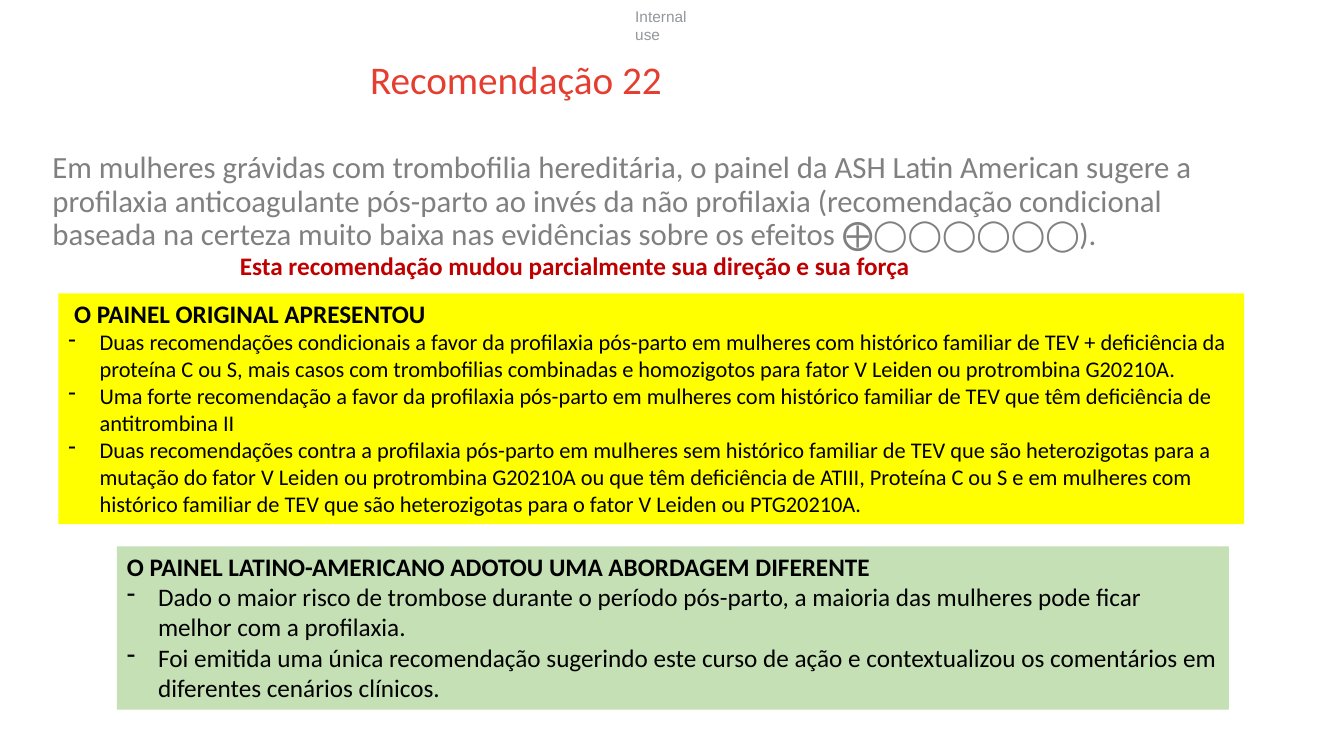
from lxml.etree import SubElement
from pptx import Presentation
from pptx.dml.color import RGBColor
from pptx.enum.shapes import MSO_SHAPE
from pptx.enum.text import MSO_ANCHOR, MSO_AUTO_SIZE, PP_ALIGN
from pptx.oxml.ns import qn
from pptx.util import Inches, Pt

COLORS = {"label": "93979B", "title": "E53E31", "body": "808080", "alert": "C00000",
          "text": "000000", "yellow": "FFFF00", "green": "C5E0B4"}
HANG = 0.31

TITLE = "Recomendação 22"
BODY = ("Em mulheres grávidas com trombofilia hereditária, o painel da ASH Latin American "
        "sugere a profilaxia anticoagulante pós-parto ao invés da não profilaxia "
        "(recomendação condicional baseada na certeza muito baixa nas evidências sobre os "
        "efeitos ⨁◯◯◯◯◯◯).")
LABEL = "Internal use"
ALERT = "Esta recomendação mudou parcialmente sua direção e sua força"

PANELS = [
    {"box": (0.58, 2.91, 11.76, 2.29), "fill": "yellow", "size": 16,
     "heading": " O PAINEL ORIGINAL APRESENTOU",
     "items": [
         "Duas recomendações condicionais a favor da profilaxia pós-parto em mulheres com "
         "histórico familiar de TEV + deficiência da proteína C ou S, mais casos com "
         "trombofilias combinadas e homozigotos para fator V Leiden ou protrombina G20210A.",
         "Uma forte recomendação a favor da profilaxia pós-parto em mulheres com histórico "
         "familiar de TEV que têm deficiência de antitrombina II",
         "Duas recomendações contra a profilaxia pós-parto em mulheres sem histórico familiar "
         "de TEV que são heterozigotas para a mutação do fator V Leiden ou protrombina G20210A "
         "ou que têm deficiência de ATIII, Proteína C ou S e em mulheres com histórico familiar "
         "de TEV que são heterozigotas para o fator V Leiden ou PTG20210A."]},
    {"box": (1.16, 5.42, 11.03, 1.62), "fill": "green", "size": 18,
     "heading": "O PAINEL LATINO-AMERICANO ADOTOU UMA ABORDAGEM DIFERENTE",
     "items": [
         "Dado o maior risco de trombose durante o período pós-parto, a maioria das mulheres "
         "pode ficar melhor com a profilaxia.",
         "Foi emitida uma única recomendação sugerindo este curso de ação e contextualizou os "
         "comentários em diferentes cenários clínicos."]},
]


def inches(box):
    return [Inches(v) for v in box]


def setup_frame(sp, margin=None):
    """Wrap text from the top left; margin, if given, applies to all four sides."""
    tf = sp.text_frame
    formats = {"word_wrap": True, "auto_size": MSO_AUTO_SIZE.NONE,
               "vertical_anchor": MSO_ANCHOR.TOP}
    if margin is not None:
        formats |= {f"margin_{side}": margin for side in ("left", "top", "right", "bottom")}
    for name, value in formats.items():
        setattr(tf, name, value)
    return tf


def write(p, text, size, color, bold=False, font="Calibri", **spacing):
    for name, value in ({"alignment": PP_ALIGN.LEFT} | spacing).items():
        setattr(p, name, value)
    r = p.add_run()
    r.text = text
    for name, value in {"size": Pt(size), "bold": bold, "name": font}.items():
        setattr(r.font, name, value)
    r.font.color.rgb = RGBColor.from_string(COLORS[color])


def set_bullet(p, char=None, hang=0):
    """Give a paragraph a hanging bullet, or none when char is missing."""
    pPr = p._p.get_or_add_pPr()
    pPr.set("marL", str(Inches(hang)))
    pPr.set("indent", str(-Inches(hang)))
    if char:
        SubElement(pPr, qn("a:buChar"), char=char)
    else:
        SubElement(pPr, qn("a:buNone"))


def place(sp, box):
    for name, value in zip(("left", "top", "width", "height"), inches(box)):
        setattr(sp, name, value)


def add_text(s, box, text, size, color, margin=None, **fmt):
    tf = setup_frame(s.shapes.add_textbox(*inches(box)), margin)
    write(tf.paragraphs[0], text, size, color, **fmt)


def add_panel(s, panel):
    sp = s.shapes.add_shape(MSO_SHAPE.RECTANGLE, *inches(panel["box"]))
    sp.shadow.inherit = False
    sp.fill.solid()
    sp.fill.fore_color.rgb = RGBColor.from_string(COLORS[panel["fill"]])
    sp.line.fill.background()
    tf = setup_frame(sp)
    write(tf.paragraphs[0], panel["heading"], 18, "text", bold=True)
    for item in panel["items"]:
        p = tf.add_paragraph()
        set_bullet(p, "-", HANG)
        write(p, item, panel["size"], "text")


def main():
    prs = Presentation()
    prs.slide_width, prs.slide_height = Inches(13.33), Inches(7.5)
    s = prs.slides.add_slide(prs.slide_layouts[1])

    title, body = s.shapes.title, s.placeholders[1]
    place(title, (3.67, 0.6, 5.93, 0.46))
    write(setup_frame(title, 0).paragraphs[0], TITLE, 28, "title", line_spacing=0.9)
    place(body, (0.52, 1.51, 12, 1.02))
    p = setup_frame(body, 0).paragraphs[0]
    set_bullet(p)
    write(p, BODY, 22, "body", line_spacing=0.9, space_before=Pt(0))

    add_text(s, (6.3, 0.07, 0.78, 0.18), LABEL, 11, "label", margin=0, font="Arial")
    add_text(s, (2.28, 2.43, 8.77, 0.4), ALERT, 18, "alert", bold=True)
    for panel in PANELS:
        add_panel(s, panel)
    prs.save("out.pptx")


if __name__ == "__main__":
    main()
